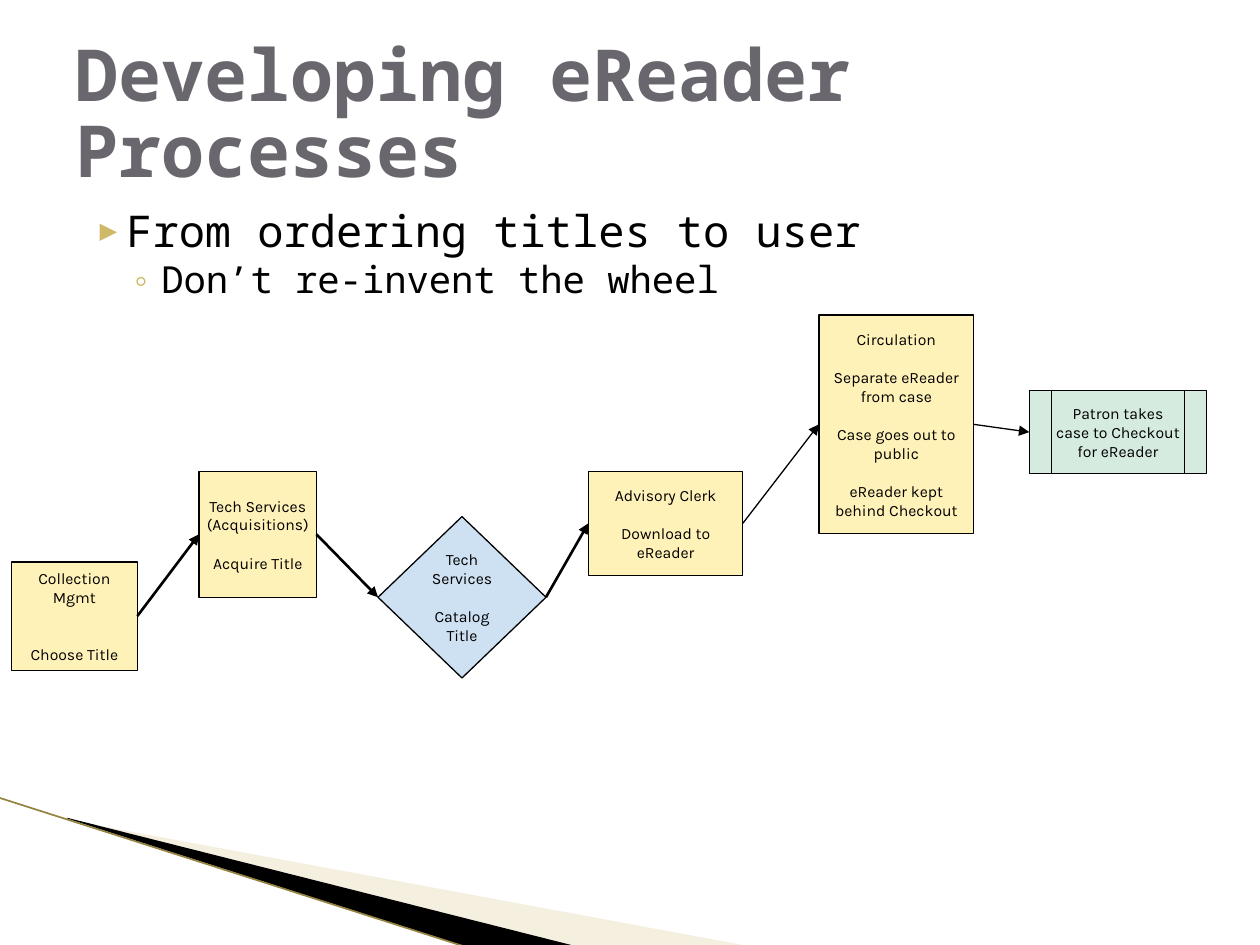
from lxml.etree import SubElement
from pptx import Presentation
from pptx.dml.color import RGBColor
from pptx.enum.shapes import MSO_CONNECTOR as CONNECTOR, MSO_SHAPE as SHAPE
from pptx.enum.text import MSO_ANCHOR as ANCHOR, MSO_AUTO_SIZE as AUTO_SIZE, PP_ALIGN as ALIGN
from pptx.oxml.ns import qn
from pptx.util import Pt

rgb = RGBColor.from_string
BLACK, YELLOW, GREEN, BLUE = "000000", "FFF2B9", "D5EBDF", "CEE1F2"


def write(paragraph, text, font="Karla", size=9, color=BLACK, bold=False,
          align=ALIGN.LEFT, before=0, spacing=1.0):
    paragraph.alignment = align
    paragraph.space_before = Pt(before)
    paragraph.line_spacing = spacing
    run = paragraph.add_run()
    run.text = text
    run.font.name = font
    run.font.size = Pt(size)
    run.font.bold = bold
    run.font.color.rgb = rgb(color)


def draw_line(start, end, color, width):
    line = slide.shapes.add_connector(
        CONNECTOR.STRAIGHT, *[Pt(value) for value in (*start, *end)])
    line.line.color.rgb = rgb(color)
    line.line.width = Pt(width)
    SubElement(line._element.spPr, qn("a:effectLst"))
    return line


prs = Presentation()
prs.slide_width, prs.slide_height = Pt(720), Pt(540)
slide = prs.slides.add_slide(prs.slide_layouts[1])

wedges = [
    ("E4D7AD", 40, [(39.6, 468.7), (428.4, 540.7), (328.3, 540.7), (39.6, 468)]),
    (BLACK, 100, [(38.2, 467.3), (329, 540.7), (267.8, 541.4), (38.9, 468)]),
]
for color, opacity, points in wedges:
    builder = slide.shapes.build_freeform(Pt(points[0][0]), Pt(points[0][1]))
    builder.add_line_segments([(Pt(x), Pt(y)) for x, y in points[1:]])
    wedge = builder.convert_to_shape()
    wedge.shadow.inherit = False
    wedge.fill.solid()
    wedge.fill.fore_color.rgb = rgb(color)
    wedge.line.fill.background()
    solid = wedge._element.spPr.find(qn("a:solidFill"))
    SubElement(solid[0], qn("a:alpha"), val=str(opacity * 1000))
draw_line((-0.7, 455.8), (267.1, 541.4), "948240", 0.95)

title = slide.shapes.title
body = slide.placeholders[1]
for holder, top, height, anchor in [(title, 21.6, 90, ANCHOR.MIDDLE),
                                    (body, 116.6, 63.4, ANCHOR.TOP)]:
    holder.left, holder.top, holder.width, holder.height = Pt(36), Pt(top), Pt(648), Pt(height)
    holder.text_frame.auto_size = AUTO_SIZE.NONE
    holder.text_frame.word_wrap = True
    holder.text_frame.vertical_anchor = anchor
write(title.text_frame.paragraphs[0], "Developing eReader Processes",
      font="Noto Sans Mono", size=41, color="69676D", bold=True, spacing=0.88)

bullets = [
    ("From ordering titles to user", 25, 4, 28.8, -20.2, "▶", 68),
    ("Don’t re-invent the wheel", 21.3, 3.2, 49, -18, "◦", 100),
]
for level, (text, size, before, margin, indent, mark, scale) in enumerate(bullets):
    frame = body.text_frame
    item = frame.add_paragraph() if level else frame.paragraphs[0]
    item.level = level
    write(item, text, font="Noto Sans Mono", size=size, before=before, spacing=0.88)
    props = item._p.get_or_add_pPr()
    props.set("marL", str(Pt(margin)))
    props.set("indent", str(Pt(indent)))
    SubElement(SubElement(props, qn("a:buClr")), qn("a:srgbClr"), val="CEB966")
    SubElement(props, qn("a:buSzPct"), val=str(scale * 1000))
    SubElement(props, qn("a:buFont"), typeface="Noto Sans Mono")
    SubElement(props, qn("a:buChar"), char=mark)

LINE = 10.9
steps = [
    (SHAPE.FLOWCHART_PROCESS, YELLOW, (6.5, 321.1, 72, 61.9), 3.6,
     [("Collection Mgmt", 0), ("Choose Title", 2)]),
    (SHAPE.FLOWCHART_PROCESS, YELLOW, (113.8, 269.3, 67, 72), 2,
     [("Tech Services", 0), ("(Acquisitions)", 0), ("Acquire Title", 1)]),
    (SHAPE.FLOWCHART_DECISION, BLUE, (216, 295.2, 96, 92.2), 2,
     [("Tech Services", 0), ("Catalog Title", 1)]),
    (SHAPE.FLOWCHART_PROCESS, YELLOW, (336.2, 269.3, 88.3, 59.5), 2,
     [("Advisory Clerk", 0), ("Download to eReader", 1)]),
    (SHAPE.FLOWCHART_PROCESS, YELLOW, (468, 180, 88.3, 125), 2,
     [("Circulation", 0), ("Separate eReader from case", 1),
      ("Case goes out to public", 1), ("eReader kept behind Checkout", 1)]),
    (SHAPE.FLOWCHART_PREDEFINED_PROCESS, GREEN, (588.2, 223.2, 101.3, 47.5), 2,
     [("Patron takes case to Checkout for eReader", 0)]),
]
flow = []
for kind, color, place, inset, texts in steps:
    step = slide.shapes.add_shape(kind, *[Pt(value) for value in place])
    step.shadow.inherit = False
    step.fill.solid()
    step.fill.fore_color.rgb = rgb(color)
    step.line.color.rgb = rgb(BLACK)
    step.line.width = Pt(0.75)
    frame = step.text_frame
    frame.word_wrap = True
    frame.vertical_anchor = ANCHOR.MIDDLE
    frame.margin_left = frame.margin_right = Pt(inset)
    frame.margin_top = frame.margin_bottom = Pt(inset)
    for index, (text, gap) in enumerate(texts):
        paragraph = frame.add_paragraph() if index else frame.paragraphs[0]
        write(paragraph, text, align=ALIGN.CENTER, before=gap * LINE)
    flow.append(step)

for source, target, width in zip(flow, flow[1:], (1.5, 1.5, 1.5, 0.75, 0.75)):
    arrow = draw_line((0, 0), (0, 0), BLACK, width)
    arrow.begin_connect(source, 3)
    arrow.end_connect(target, 1)
    SubElement(arrow.line._get_or_add_ln(), qn("a:tailEnd"), type="triangle")

prs.save("out.pptx")
